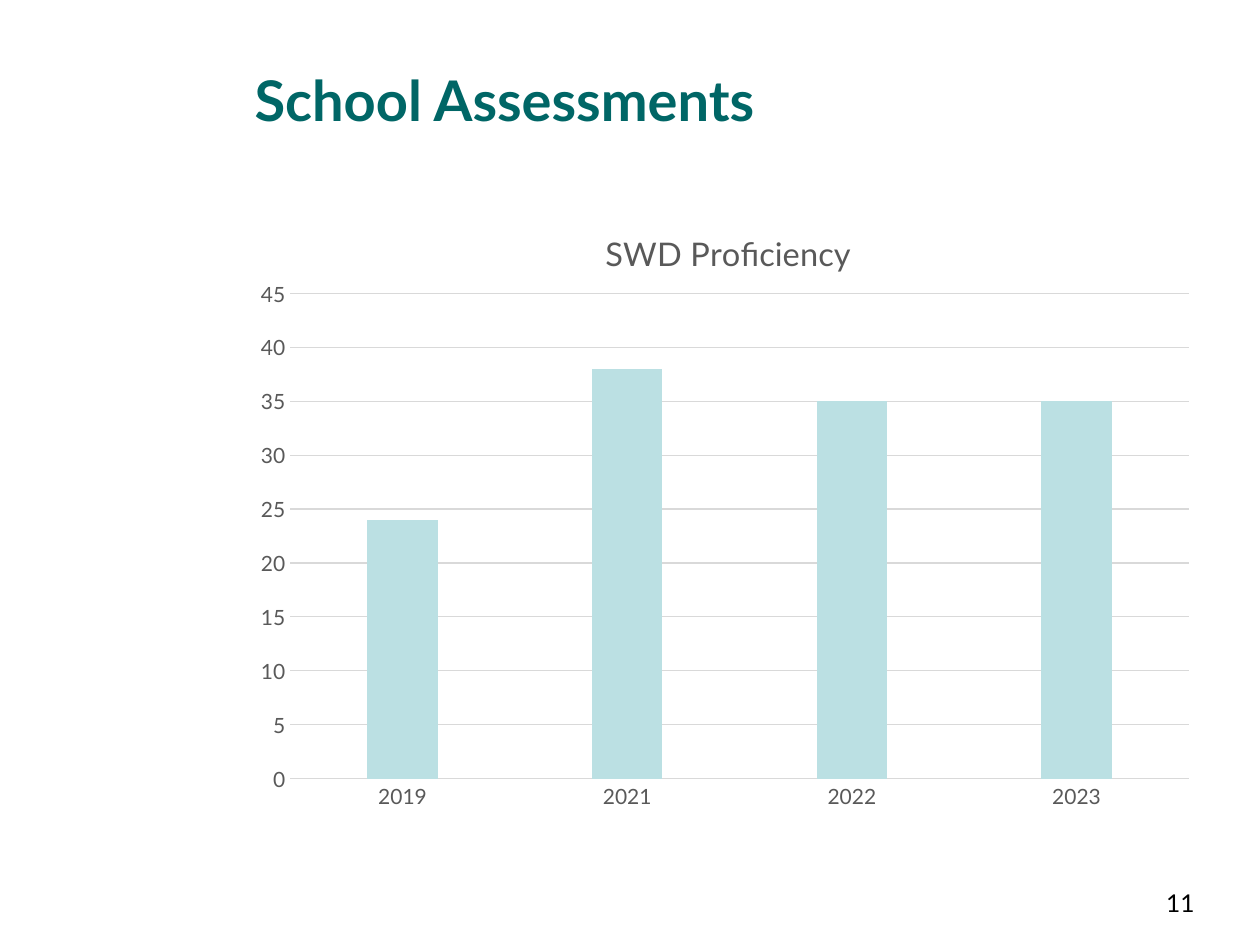
import pptx
import pptx.util
import pptx.dml.color
import pptx.chart.data
import pptx.enum.chart
import pptx.enum.text
import pptx.oxml
import pptx.oxml.ns

Inches, Pt = pptx.util.Inches, pptx.util.Pt
Align = pptx.enum.text.PP_ALIGN
Anchor = pptx.enum.text.MSO_ANCHOR
Tick = pptx.enum.chart.XL_TICK_MARK

# Content
TITLE = "School Assessments"
HEAD = "SWD Proficiency"
PAGE = "11"
SCORES = {"2019": 24, "2021": 38, "2022": 35, "2023": 35}

FACE = "Lato"
TEAL, AQUA, GREY, RULE, BLACK = "006666", "BBE0E3", "595959", "D9D9D9", "000000"
LEFT, WIDE = 1.92, 7.67


def tint(code):
    return pptx.dml.color.RGBColor.from_string(code)


def style(font, size, color, bold=False):
    font.name, font.size, font.bold = FACE, Pt(size), bold
    font.color.rgb = tint(color)


def write(frame, text, size=12, color=BLACK, bold=False, align=Align.LEFT,
          anchor=Anchor.TOP):
    frame.word_wrap = True
    frame.vertical_anchor = anchor
    para = frame.paragraphs[0]
    para.alignment = align
    run = para.add_run()
    run.text = text
    style(run.font, size, color, bold)


def rule(line):
    line.color.rgb = tint(RULE)
    line.width = Pt(0.75)


def layout(parent, after, **spots):
    """Place a chart part by fractions of the chart area."""
    for old in parent.findall(pptx.oxml.ns.qn("c:layout")):
        parent.remove(old)
    inner = '<c:layoutTarget val="inner"/>' if "w" in spots else ""
    modes = "".join(f'<c:{key}Mode val="edge"/>' for key in "xy")
    sizes = "".join(f'<c:{key} val="{val}"/>' for key, val in spots.items())
    node = pptx.oxml.parse_xml(
        f'<c:layout {pptx.oxml.ns.nsdecls("c")}><c:manualLayout>'
        f'{inner}{modes}{sizes}</c:manualLayout></c:layout>')
    if after is None:
        parent.insert(0, node)
    else:
        after.addnext(node)


deck = pptx.Presentation()
deck.slide_width, deck.slide_height = Inches(10), Inches(7.5)
slide = deck.slides.add_slide(deck.slide_layouts[5])

# Title
title = slide.shapes.title
title.left, title.top = Inches(LEFT), Inches(0.33)
title.width, title.height = Inches(WIDE), Inches(0.92)
write(title.text_frame, TITLE, size=32, color=TEAL, bold=True,
      anchor=Anchor.MIDDLE)

# Chart
data = pptx.chart.data.CategoryChartData()
data.categories = list(SCORES)
data.add_series("Series 1", list(SCORES.values()))
chart = slide.shapes.add_chart(
    pptx.enum.chart.XL_CHART_TYPE.COLUMN_CLUSTERED,
    Inches(LEFT), Inches(1.53), Inches(WIDE), Inches(5), data).chart
style(chart.font, 10, BLACK)
chart.has_legend = False
chart.has_title = True
head = chart.chart_title
write(head.text_frame, HEAD, size=18.6, color=GREY, align=Align.CENTER)
head.include_in_layout = False

plot = chart.plots[0]
plot.gap_width, plot.overlap = 219, -27
plot.vary_by_categories = False
bars = plot.series[0]
bars.format.fill.solid()
bars.format.fill.fore_color.rgb = tint(AQUA)
bars.format.line.fill.background()

# Axes
years, marks = chart.category_axis, chart.value_axis
for axis in (years, marks):
    axis.major_tick_mark = axis.minor_tick_mark = Tick.NONE
    style(axis.tick_labels.font, 12, GREY)
rule(years.format.line)
marks.format.line.fill.background()
marks.has_major_gridlines = True
rule(marks.major_gridlines.format.line)
marks.minimum_scale, marks.maximum_scale, marks.major_unit = 0, 45, 5

# Chart part positions
area = chart.element.find(".//" + pptx.oxml.ns.qn("c:plotArea"))
layout(area, None, x=0.05, y=0.16, w=0.93, h=0.77)
top = chart.element.find(".//" + pptx.oxml.ns.qn("c:title"))
layout(top, top.find(pptx.oxml.ns.qn("c:tx")), x=0.37, y=0.05)

# Page number
box = slide.shapes.add_textbox(Inches(8.08), Inches(7), Inches(1.5), Inches(0.5))
write(box.text_frame, PAGE, size=14, align=Align.RIGHT)

deck.save("out.pptx")
